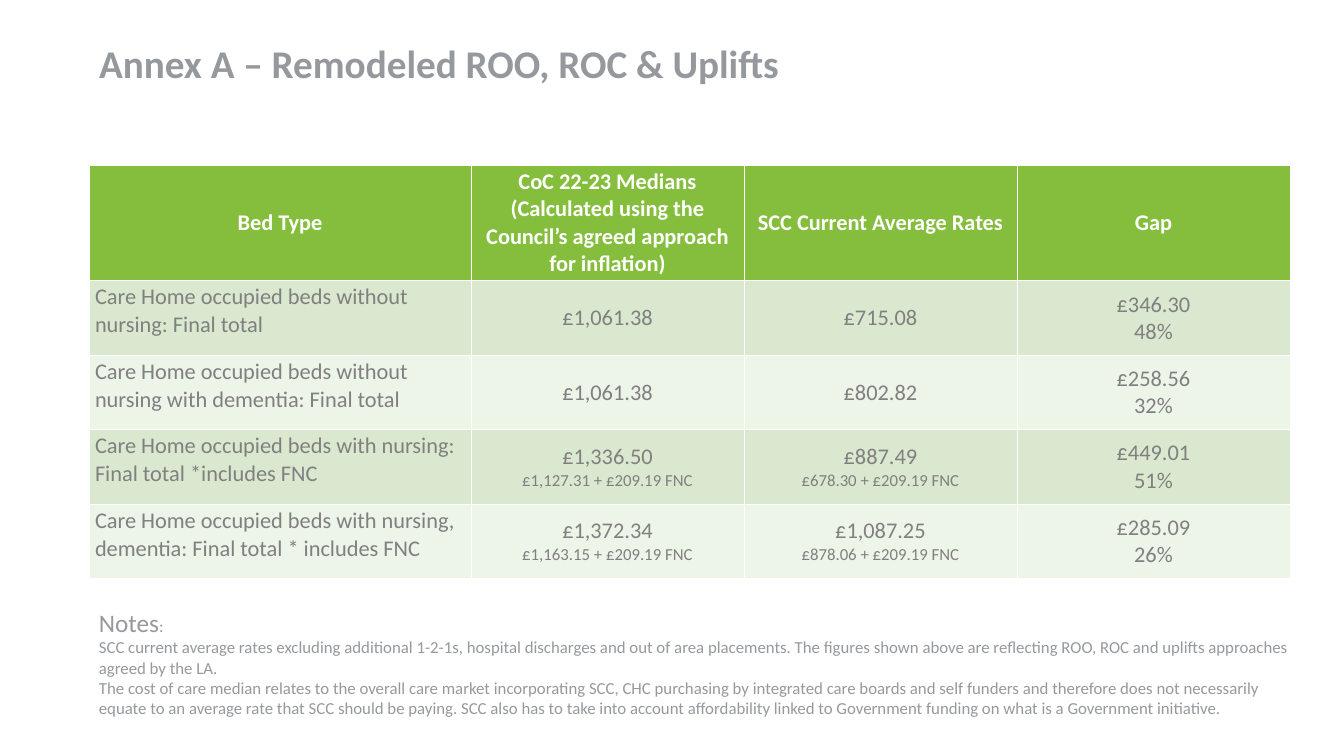
"""Build the annex slide comparing cost of care medians with current rates."""
from lxml.etree import SubElement
from pptx import Presentation
from pptx.dml.color import RGBColor
from pptx.enum.text import MSO_ANCHOR, PP_ALIGN
from pptx.oxml.ns import qn
from pptx.util import Pt

TITLE = "Annex A – Remodeled ROO, ROC & Uplifts"
HEADINGS = [
    "Bed Type",
    "CoC 22-23 Medians (Calculated using the Council’s agreed approach for inflation)",
    "SCC Current Average Rates",
    "Gap",
]
BEDS = [
    ("Care Home occupied beds without nursing: Final total",
     ["£1,061.38"], ["£715.08"], ["£346.30", "48%"]),
    ("Care Home occupied beds without nursing with dementia: Final total",
     ["£1,061.38"], ["£802.82"], ["£258.56", "32%"]),
    ("Care Home occupied beds with nursing: Final total *includes FNC",
     ["£1,336.50", "£1,127.31 + £209.19 FNC"],
     ["£887.49", "£678.30 + £209.19 FNC"], ["£449.01", "51%"]),
    ("Care Home occupied beds with nursing, dementia: Final total * includes FNC",
     ["£1,372.34", "£1,163.15 + £209.19 FNC"],
     ["£1,087.25", "£878.06 + £209.19 FNC"], ["£285.09", "26%"]),
]
NOTES = [
    "SCC current average rates excluding additional 1-2-1s, hospital discharges and out of area "
    "placements. The figures shown above are reflecting ROO, ROC and uplifts approaches agreed by the LA.",
    "The cost of care median relates to the overall care market incorporating SCC, CHC purchasing by "
    "integrated care boards and self funders and therefore does not necessarily equate to an average "
    "rate that SCC should be paying. SCC also has to take into account affordability linked to "
    "Government funding on what is a Government initiative.",
]

FONT = "Calibri"
GREY = RGBColor(0x95, 0x99, 0x9D)
CELL_GREY = RGBColor(0x80, 0x80, 0x80)
WHITE = RGBColor(0xFF, 0xFF, 0xFF)
GREEN = RGBColor(0x85, 0xBE, 0x3D)
BANDS = [RGBColor(0xD9, 0xE8, 0xCE), RGBColor(0xED, 0xF4, 0xE8)]

LEFT = 89
COLUMN_WIDTHS = [382, 273, 273, 273]
ROW_HEIGHTS = [115, 75, 74, 75, 74]


def px(length):
    return round(length * 914400 / 100.8)


def style(font, size, color, bold=False):
    font.name, font.size, font.bold = FONT, Pt(size), bold
    font.color.rgb = color


def draw_borders(cell, widths):
    properties = cell._tc.get_or_add_tcPr()
    for side, width in widths.items():
        line = SubElement(properties, qn(f"a:ln{side}"), w=str(Pt(width)))
        fill = SubElement(line, qn("a:solidFill"))
        SubElement(fill, qn("a:srgbClr"), val=str(WHITE))


def fill_cell(row, column, lines):
    cell = rates.cell(row, column)
    draw_borders(cell, {"L": 0.5, "R": 0.5,
                        "T": 1.5 if row == 1 else 0.5,
                        "B": 1.5 if row == 0 else 0.5})
    cell.fill.solid()
    cell.fill.fore_color.rgb = BANDS[(row - 1) % 2] if row else GREEN
    cell.margin_left = cell.margin_right = px(6)
    cell.margin_top = cell.margin_bottom = px(3)
    is_bed_name = row > 0 and column == 0
    cell.vertical_anchor = MSO_ANCHOR.TOP if is_bed_name else MSO_ANCHOR.MIDDLE
    cell.text_frame.text = "\n".join(lines)
    for paragraph, line in zip(cell.text_frame.paragraphs, lines):
        paragraph.alignment = PP_ALIGN.LEFT if is_bed_name else PP_ALIGN.CENTER
        size = 12 if line.endswith("FNC") and not is_bed_name else 16
        style(paragraph.font, size, CELL_GREY if row else WHITE, row == 0)


presentation = Presentation()
presentation.slide_width, presentation.slide_height = px(1344), px(756)
slide = presentation.slides.add_slide(presentation.slide_layouts[5])

title = slide.shapes.title
title.left, title.top, title.width, title.height = px(LEFT), px(40), px(919), px(99)
title.text_frame.text = TITLE
title.text_frame.vertical_anchor = MSO_ANCHOR.TOP
heading = title.text_frame.paragraphs[0]
heading.alignment = PP_ALIGN.LEFT
heading.line_spacing = 0.9
style(heading.font, 28, GREY, True)

rates = slide.shapes.add_table(
    len(BEDS) + 1, len(HEADINGS), px(LEFT), px(165),
    px(sum(COLUMN_WIDTHS)), px(sum(ROW_HEIGHTS))).table
for column, width in zip(rates.columns, COLUMN_WIDTHS):
    column.width = px(width)
for row, height in zip(rates.rows, ROW_HEIGHTS):
    row.height = px(height)
for column, text in enumerate(HEADINGS):
    fill_cell(0, column, [text])
for row, (bed, *amounts) in enumerate(BEDS, start=1):
    for column, lines in enumerate([[bed], *amounts]):
        fill_cell(row, column, lines)

notes = slide.shapes.add_textbox(px(LEFT), px(602), px(1213), px(122)).text_frame
notes.word_wrap = True
label = notes.paragraphs[0]
for text, size in [("Notes", 18), (":", 12)]:
    run = label.add_run()
    run.text = text
    style(run.font, size, GREY)
for text in NOTES:
    note = notes.add_paragraph()
    note.text = text
    style(note.font, 12, GREY)

presentation.save("out.pptx")
